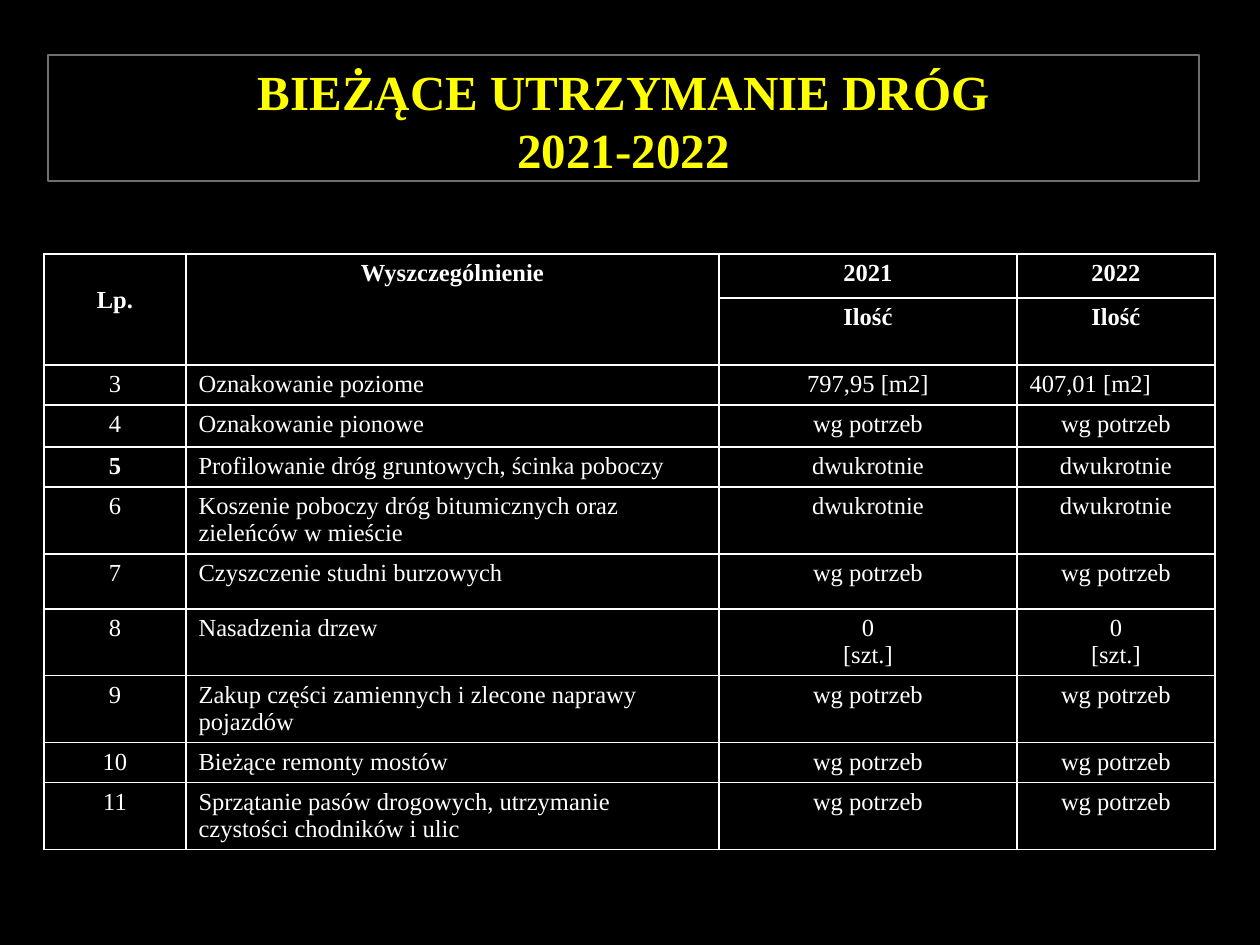
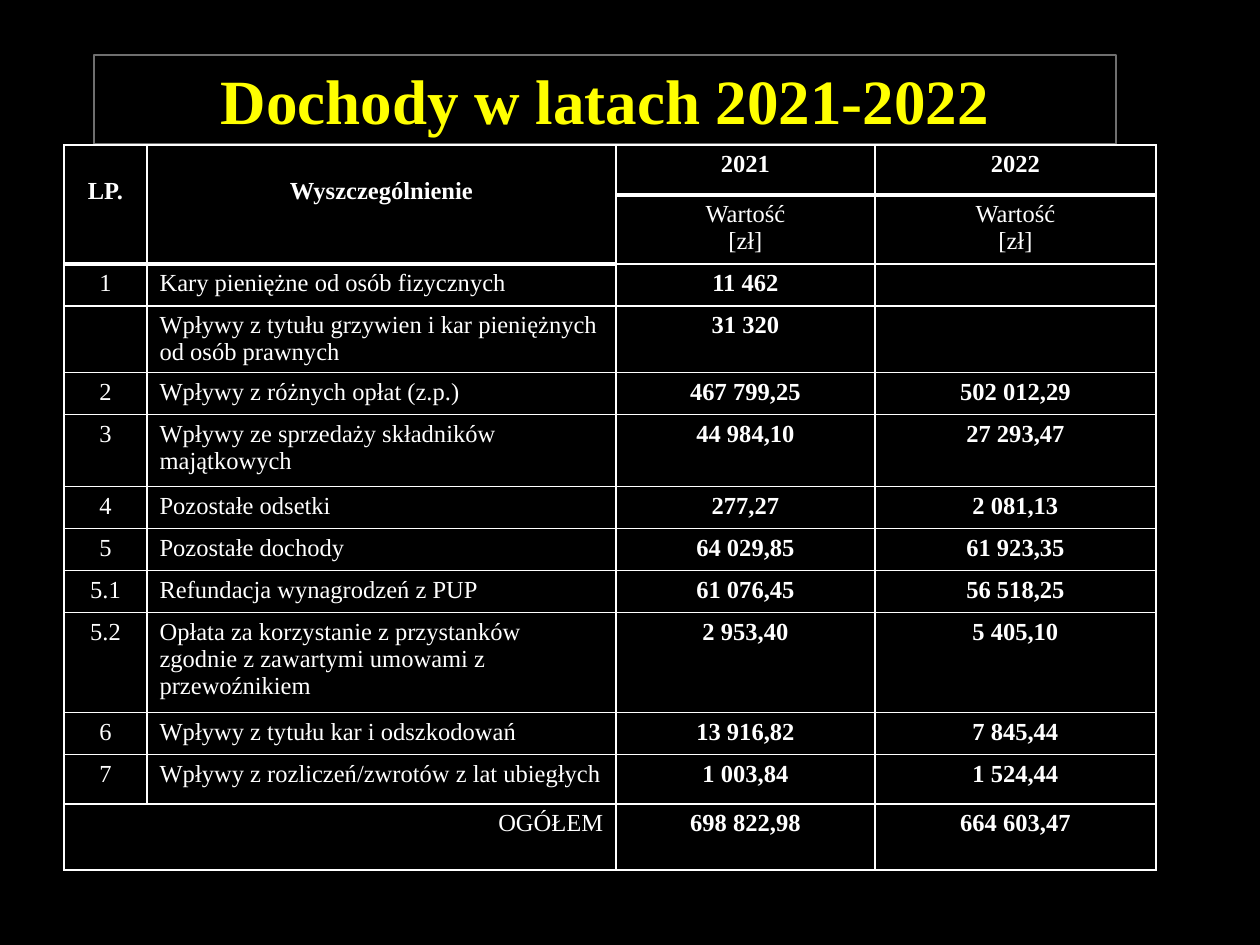
"""Build two slides on road maintenance and income in 2021-2022."""
from copy import deepcopy

from lxml.etree import SubElement
from pptx import Presentation
from pptx.dml.color import RGBColor
from pptx.enum.text import MSO_ANCHOR, MSO_AUTO_SIZE, PP_ALIGN
from pptx.oxml.ns import qn
from pptx.util import Emu, Pt

COLORS = {"background": "000000", "title": "FFFF00", "frame": "6F6F6F", "text": "FFFFFF"}
FONT = "Times New Roman"
LEFT, CENTER, RIGHT = PP_ALIGN.LEFT, PP_ALIGN.CENTER, PP_ALIGN.RIGHT
AS_NEEDED, TWICE, TREES = "wg potrzeb", "dwukrotnie", "0\n[szt.]"

MAINTENANCE = [
    ("Lp.", "Wyszczególnienie", "2021", "2022"),
    ("", "", "Ilość", "Ilość"),
    ("3", "Oznakowanie poziome", "797,95 [m2]", "407,01 [m2]"),
    ("4", "Oznakowanie pionowe", AS_NEEDED, AS_NEEDED),
    ("5", "Profilowanie dróg gruntowych, ścinka poboczy", TWICE, TWICE),
    ("6", "Koszenie poboczy dróg bitumicznych oraz zieleńców w mieście", TWICE, TWICE),
    ("7", "Czyszczenie studni burzowych", AS_NEEDED, AS_NEEDED),
    ("8", "Nasadzenia drzew", TREES, TREES),
    ("9", "Zakup części zamiennych i zlecone naprawy pojazdów", AS_NEEDED, AS_NEEDED),
    ("10", "Bieżące remonty mostów", AS_NEEDED, AS_NEEDED),
    ("11", "Sprzątanie pasów drogowych, utrzymanie czystości chodników i ulic",
     AS_NEEDED, AS_NEEDED),
]
INCOME = [
    ("LP.", "Wyszczególnienie", "2021", "2022"),
    ("", "", "Wartość\n[zł]", "Wartość\n[zł]"),
    ("1", "Kary pieniężne od osób fizycznych", "11 462", ""),
    ("", "Wpływy z tytułu grzywien i kar pieniężnych od osób prawnych", "31 320", ""),
    ("2", "Wpływy z różnych opłat (z.p.)", "467 799,25", "502 012,29"),
    ("3", "Wpływy ze sprzedaży składników majątkowych", "44 984,10", "27 293,47"),
    ("4", "Pozostałe odsetki", "277,27", "2 081,13"),
    ("5", "Pozostałe dochody", "64 029,85", "61 923,35"),
    ("5.1", "Refundacja wynagrodzeń z PUP", "61 076,45", "56 518,25"),
    ("5.2", "Opłata za korzystanie z przystanków zgodnie z zawartymi umowami z przewoźnikiem",
     "2 953,40", "5 405,10"),
    ("6", "Wpływy z tytułu kar i odszkodowań", "13 916,82", "7 845,44"),
    ("7", "Wpływy z rozliczeń/zwrotów z lat ubiegłych", "1 003,84", "1 524,44"),
    ("OGÓŁEM", "", "698 822,98", "664 603,47"),
]


def px(length):
    """Turn pixels into EMU at 126 pixels to the inch."""
    return Emu(round(length * 914400 / 126))


def rgb(name):
    """Look up a named colour."""
    return RGBColor.from_string(COLORS[name])


def write(frame, text, size=14, color="text", bold=False, align=CENTER):
    """Write one paragraph per line of text in the given format."""
    for index, line in enumerate(text.split("\n")):
        paragraph = frame.add_paragraph() if index else frame.paragraphs[0]
        paragraph.text = line
        paragraph.alignment = align
        for run in paragraph.runs:
            run.font.name = FONT
            run.font.size = Pt(size)
            run.font.bold = bold
            run.font.color.rgb = rgb(color)
        for line_break in paragraph._p.findall(qn("a:br")):
            line_break.append(deepcopy(paragraph.runs[0]._r.rPr))
        if not line:
            paragraph._p.get_or_add_endParaRPr().set("sz", str(size * 100))


class Deck:
    """Hold the presentation, its style and the current slide."""

    def __init__(self):
        self.presentation = Presentation()
        self.presentation.slide_width = px(1260)
        self.presentation.slide_height = px(945)
        self.slide = None

    def add_slide(self):
        """Start a slide on the dark background."""
        self.slide = self.presentation.slides.add_slide(self.presentation.slide_layouts[5])
        fill = self.slide.background.fill
        fill.solid()
        fill.fore_color.rgb = rgb("background")

    def title(self, text, box, size):
        """Place the framed title."""
        heading = self.slide.shapes.title
        heading.left, heading.top, heading.width, heading.height = map(px, box)
        heading.line.color.rgb = rgb("frame")
        heading.line.width = Pt(0.75)
        frame = heading.text_frame
        frame.auto_size = MSO_AUTO_SIZE.NONE
        frame.vertical_anchor = MSO_ANCHOR.TOP
        frame.margin_top = px(6)
        write(frame, text, size=size, color="title", bold=True)

    def borders(self, cell, row, column, heavy):
        """Draw the cell edges, thick under the cells listed as heavy."""
        properties = cell._tc.get_or_add_tcPr()
        for side in "RB" if cell.is_spanned else "LRTB":
            above = row - 1 if side == "T" else row
            thick = side in "TB" and (above, column) in heavy
            edge = SubElement(properties, qn(f"a:ln{side}"), w=str(Pt(3 if thick else 1)))
            SubElement(SubElement(edge, qn("a:solidFill")), qn("a:srgbClr"), val=COLORS["text"])

    def table(self, rows, corner, widths, heights, style, merges, heavy=()):
        """Place a table whose style rule gives the format of each cell."""
        left, top = corner
        grid = self.slide.shapes.add_table(
            len(rows), len(widths), px(left), px(top), px(sum(widths)), px(sum(heights))).table
        for column, width in zip(grid.columns, widths):
            column.width = px(width)
        for line, height in zip(grid.rows, heights):
            line.height = px(height)
        for start, end in merges:
            grid.cell(*start).merge(grid.cell(*end))
        for row, texts in enumerate(rows):
            for column, text in enumerate(texts):
                cell = grid.cell(row, column)
                self.borders(cell, row, column, heavy)
                cell.fill.solid()
                cell.fill.fore_color.rgb = rgb("background")
                options = style(row, column)
                cell.margin_top = px(options.pop("margin", 6))
                write(cell.text_frame, text, **options)


def maintenance_style(row, column):
    """Give the format of a maintenance cell."""
    if row < 2:
        return {"bold": True, "margin": 6 if column else 33}
    left = column == 1 or (row, column) == (2, 3)
    return {"align": LEFT if left else CENTER, "bold": (row, column) == (4, 0)}


def income_style(row, column):
    """Give the format of an income cell."""
    if row == 0:
        return {"bold": True, "margin": 33 if column < 2 else 6}
    if row == len(INCOME) - 1 and column == 0:
        return {"align": RIGHT}
    return {"align": LEFT if column == 1 else CENTER, "bold": row > 1 and column > 1}


def main():
    """Build and save both slides."""
    header_merges = [((0, 0), (1, 0)), ((0, 1), (1, 1))]
    total = len(INCOME) - 1
    deck = Deck()

    deck.add_slide()
    deck.title("BIEŻĄCE UTRZYMANIE DRÓG\v2021-2022", (48, 55, 1151, 126), 28)
    deck.table(MAINTENANCE, (44, 254), (142, 533, 298, 198),
               (44, 67, 40, 42, 40, 67, 55, 67, 67, 40, 67), maintenance_style, header_merges)

    deck.add_slide()
    deck.title("Dochody w latach 2021-2022", (94, 55, 1022, 89), 36)
    deck.table(INCOME, (64, 145), (83, 469, 259, 281),
               (50, 69, 42, 66, 42, 72, 42, 42, 42, 100, 42, 50, 66), income_style,
               header_merges + [((total, 0), (total, 1))],
               heavy={(0, 0), (0, 1), (0, 2), (0, 3), (1, 0), (1, 1)})

    deck.presentation.save("out.pptx")


if __name__ == "__main__":
    main()
